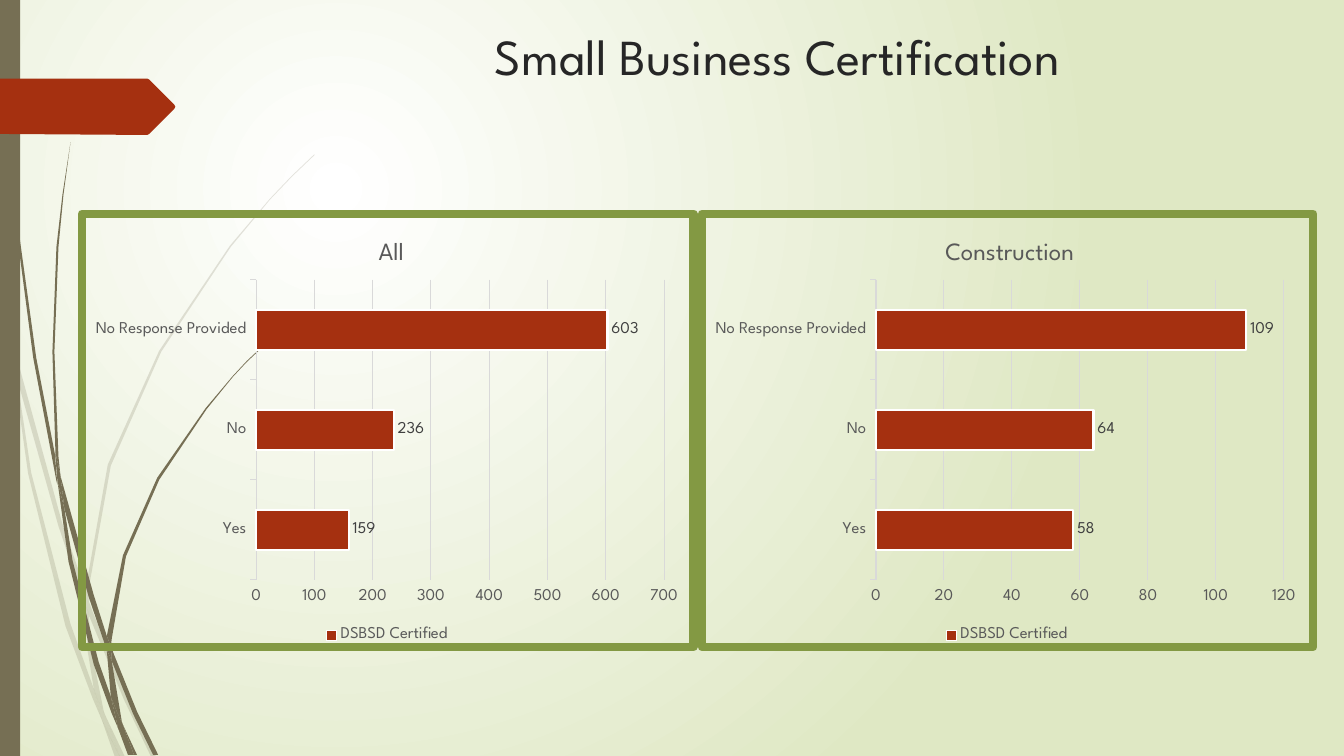
import pptx
import pptx.chart.data
import pptx.dml.color
import pptx.enum.chart
import pptx.enum.shapes
import pptx.enum.text
import pptx.oxml
import pptx.oxml.ns
import pptx.util
from pptx.dml.color import RGBColor
from pptx.util import Cm

FONT = "League Spartan"
WHITE = RGBColor(0xFF, 0xFF, 0xFF)
PALE_GREEN = RGBColor(0xDF, 0xE8, 0xC4)
BROWN = RGBColor(0x76, 0x6F, 0x54)
RUST = RGBColor(0xA5, 0x30, 0x10)
GREEN = RGBColor(0x83, 0x99, 0x43)
INK = RGBColor(0x26, 0x26, 0x26)
LABEL_GREY = RGBColor(0x40, 0x40, 0x40)
AXIS_GREY = RGBColor(0x59, 0x59, 0x59)
GRID_GREY = RGBColor(0xD9, 0xD9, 0xD9)

UNITS_PER_CM = 100 / 2.54  # outline points are in hundredths of an inch

PALE_GRASS = [
    [(11, 350), (9, 322), (0, 282), (0, 299), (10, 344)],
    [(58, 522), (84, 599), (85, 586), (62, 520), (14, 345), (17, 376)],
    [(92, 607), (88, 596), (88, 610), (123, 694), (150, 751), (155, 751), (127, 692)],
    [(119, 751), (124, 751), (105, 711)],
    [(93, 683), (70, 619), (31, 469), (17, 376), (11, 350), (28, 470), (65, 621),
     (92, 693), (101, 714), (99, 707)],
    [(84, 599), (87, 646), (93, 683), (96, 692), (105, 711), (103, 706), (91, 646),
     (88, 610), (88, 608)],
    [(88, 584), (110, 462), (160, 349), (229, 245), (268, 198), (290, 175), (312, 154),
     (312, 153), (289, 175), (268, 197), (228, 244), (158, 348), (107, 461), (85, 584),
     (85, 586), (88, 596)],
    [(101, 714), (114, 751), (119, 751)],
    [(88, 608), (88, 610), (88, 596), (85, 586), (84, 599)],
    [(96, 692), (93, 683), (99, 707), (101, 714), (119, 751), (105, 711)],
]
DARK_GRASS = [
    [(7, 110), (17, 233), (33, 355), (56, 477), (57, 481), (55, 457), (55, 453),
     (36, 355), (19, 232), (8, 109), (5, 48), (4, 0), (3, 0), (4, 48)],
    [(88, 592), (106, 645), (106, 633), (106, 631), (93, 590), (60, 472), (64, 505)],
    [(113, 649), (110, 641), (111, 656), (132, 708), (152, 749), (157, 749), (136, 706)],
    [(110, 691), (98, 657), (72, 556), (64, 505), (57, 477), (68, 557), (93, 659),
     (111, 708), (117, 722), (116, 717)],
    [(60, 472), (58, 453), (54, 349), (58, 245), (63, 193), (70, 141), (62, 193),
     (56, 245), (52, 349), (55, 449)],
    [(133, 749), (136, 749), (122, 719)],
    [(57, 477), (64, 505), (60, 472), (55, 449), (55, 453)],
    [(111, 633), (125, 552), (158, 476), (205, 406), (231, 374), (245, 359), (261, 344),
     (260, 344), (245, 358), (231, 373), (204, 405), (156, 474), (122, 551), (106, 631),
     (110, 641)],
    [(117, 722), (127, 749), (131, 749)],
    [(106, 645), (110, 691), (116, 706), (122, 719), (121, 716), (111, 656), (109, 651)],
    [(106, 645), (109, 651), (111, 656), (110, 641), (106, 631), (106, 633)],
    [(116, 706), (110, 691), (116, 717), (117, 722), (130, 749), (133, 749), (122, 719)],
]
ARROW_TAB = [(0, 0), (146, 0), (148, 1), (173, 26), (174, 28), (173, 30), (148, 55),
             (146, 56), (0, 55)]


def xml(text):
    namespaces = pptx.oxml.ns.nsdecls("a", "c")
    return pptx.oxml.parse_xml(text.replace(">", f" {namespaces}>", 1))


def style_font(font, size, color):
    font.name = FONT
    font.size = pptx.util.Pt(size)
    font.bold = False
    font.color.rgb = color


def write_text(frame, text, size, color, align=pptx.enum.text.PP_ALIGN.CENTER):
    paragraph = frame.paragraphs[0]
    paragraph.alignment = align
    run = paragraph.add_run()
    run.text = text
    style_font(run.font, size, color)


def paint(shape, color):
    shape.shadow.inherit = False
    shape.fill.solid()
    shape.fill.fore_color.rgb = color
    shape.line.fill.background()


def draw_outline(shapes, left, top, points, color, opacity=100):
    builder = shapes.build_freeform(*points[0], scale=Cm(1) / UNITS_PER_CM)
    builder.add_line_segments(points[1:], close=True)
    outline = builder.convert_to_shape(left, top)
    paint(outline, color)
    if opacity < 100:
        tint = outline.fill._xPr.find(".//" + pptx.oxml.ns.qn("a:srgbClr"))
        tint.append(xml(f'<a:alpha val="{opacity * 1000}"></a:alpha>'))


def add_background(slide):
    fill = slide.background.fill
    fill.gradient()
    for stop, color, position in zip(fill.gradient_stops, (WHITE, PALE_GREEN), (0, 1)):
        stop.color.rgb = color
        stop.position = position
    linear = slide._element.find(".//" + pptx.oxml.ns.qn("a:lin"))
    linear.getparent().replace(linear, xml(
        '<a:path path="circle"><a:fillToRect l="50000" t="50000" r="100000" b="100000"/></a:path>'))


def add_side_decoration(slide, left, top, height):
    """Grass blades, the side bar and the arrow tab along the left edge."""
    for blades, opacity in ((PALE_GRASS, 20), (DARK_GRASS, 100)):
        tuft = slide.shapes.add_group_shape()
        for blade in blades:
            draw_outline(tuft.shapes, left, top, blade, BROWN, opacity)
    bar = slide.shapes.add_shape(
        pptx.enum.shapes.MSO_SHAPE.RECTANGLE, left, top, Cm(0.51), height)
    paint(bar, BROWN)
    draw_outline(slide.shapes, left, top + Cm(1.98), ARROW_TAB, RUST)


def add_title(slide, text, left, top, width, height):
    title = slide.shapes.title
    title.left, title.top, title.width, title.height = left, top, width, height
    title.text_frame.word_wrap = True
    title.text_frame.vertical_anchor = pptx.enum.text.MSO_ANCHOR.TOP
    write_text(title.text_frame, text, 36, INK)


def set_layout(element, x, y, size=None):
    """Place a chart part by fractions of the chart area."""
    target = '<c:layoutTarget val="inner"/>' if size else ""
    extent = f'<c:w val="{size[0]}"/><c:h val="{size[1]}"/>' if size else ""
    for old in element.findall(pptx.oxml.ns.qn("c:layout")):
        element.remove(old)
    layout = xml(
        f'<c:layout><c:manualLayout>{target}<c:xMode val="edge"/><c:yMode val="edge"/>'
        f'<c:x val="{x}"/><c:y val="{y}"/>{extent}</c:manualLayout></c:layout>')
    text = element.find(pptx.oxml.ns.qn("c:tx"))
    if text is None:
        element.insert(0, layout)
    else:
        text.addnext(layout)


def add_certification_chart(slide, heading, counts, step, limit, heading_x,
                            left, top, width, height):
    data = pptx.chart.data.CategoryChartData()
    data.categories = ["Yes", "No", "No Response Provided"]
    data.add_series("DSBSD Certified", counts)
    chart = slide.shapes.add_chart(
        pptx.enum.chart.XL_CHART_TYPE.BAR_CLUSTERED, left, top, width, height, data).chart
    chart.font.name = FONT
    chart.font.size = pptx.util.Pt(10)
    write_text(chart.chart_title.text_frame, heading, 18, AXIS_GREY)
    chart.chart_title.include_in_layout = False
    set_layout(chart.chart_title._element, heading_x, 0.05)
    set_layout(chart._chartSpace.chart.plotArea, 0.285, 0.152, (0.667, 0.693))

    chart.has_legend = True
    chart.legend.position = pptx.enum.chart.XL_LEGEND_POSITION.BOTTOM
    chart.legend.include_in_layout = False
    for part in (chart.legend.font, chart.category_axis.tick_labels.font,
                 chart.value_axis.tick_labels.font):
        style_font(part, 12, AXIS_GREY)

    counts_axis = chart.value_axis
    counts_axis.minimum_scale, counts_axis.maximum_scale = 0, limit
    counts_axis.major_unit = step
    counts_axis.format.line.fill.background()
    for line in (chart.category_axis.format.line, counts_axis.major_gridlines.format.line):
        line.color.rgb = GRID_GREY
        line.width = pptx.util.Pt(0.75)

    plot = chart.plots[0]
    plot.gap_width = 150
    plot.vary_by_categories = False
    bars = plot.series[0].format
    bars.fill.solid()
    bars.fill.fore_color.rgb = RUST
    bars.line.color.rgb = WHITE
    bars.line.width = pptx.util.Pt(1.5)
    plot.has_data_labels = True
    plot.data_labels.show_value = True
    plot.data_labels.position = pptx.enum.chart.XL_LABEL_POSITION.OUTSIDE_END
    style_font(plot.data_labels.font, 12, LABEL_GREY)

    chart._chartSpace.chart.addnext(xml(
        f'<c:spPr><a:noFill/><a:ln w="{pptx.util.Pt(6)}"><a:solidFill>'
        f'<a:srgbClr val="{GREEN}"/></a:solidFill><a:round/></a:ln></c:spPr>'))


def main():
    deck = pptx.Presentation()
    deck.slide_width, deck.slide_height = Cm(33.87), Cm(19.05)
    slide = deck.slides.add_slide(deck.slide_layouts[5])
    add_background(slide)
    add_side_decoration(slide, 0, 0, deck.slide_height)
    add_title(slide, "Small Business Certification", Cm(7.21), Cm(0.51), Cm(24.77), Cm(3.56))
    panels = [("All", (159, 236, 603), 100, 700, 0.478),
              ("Construction", (58, 64, 109), 20, 120, 0.391)]
    panel_width = Cm(15.62)
    for column, panel in enumerate(panels):
        add_certification_chart(slide, *panel, Cm(1.96) + column * panel_width, Cm(5.28),
                                panel_width, Cm(11.13))
    deck.save("out.pptx")


if __name__ == "__main__":
    main()
